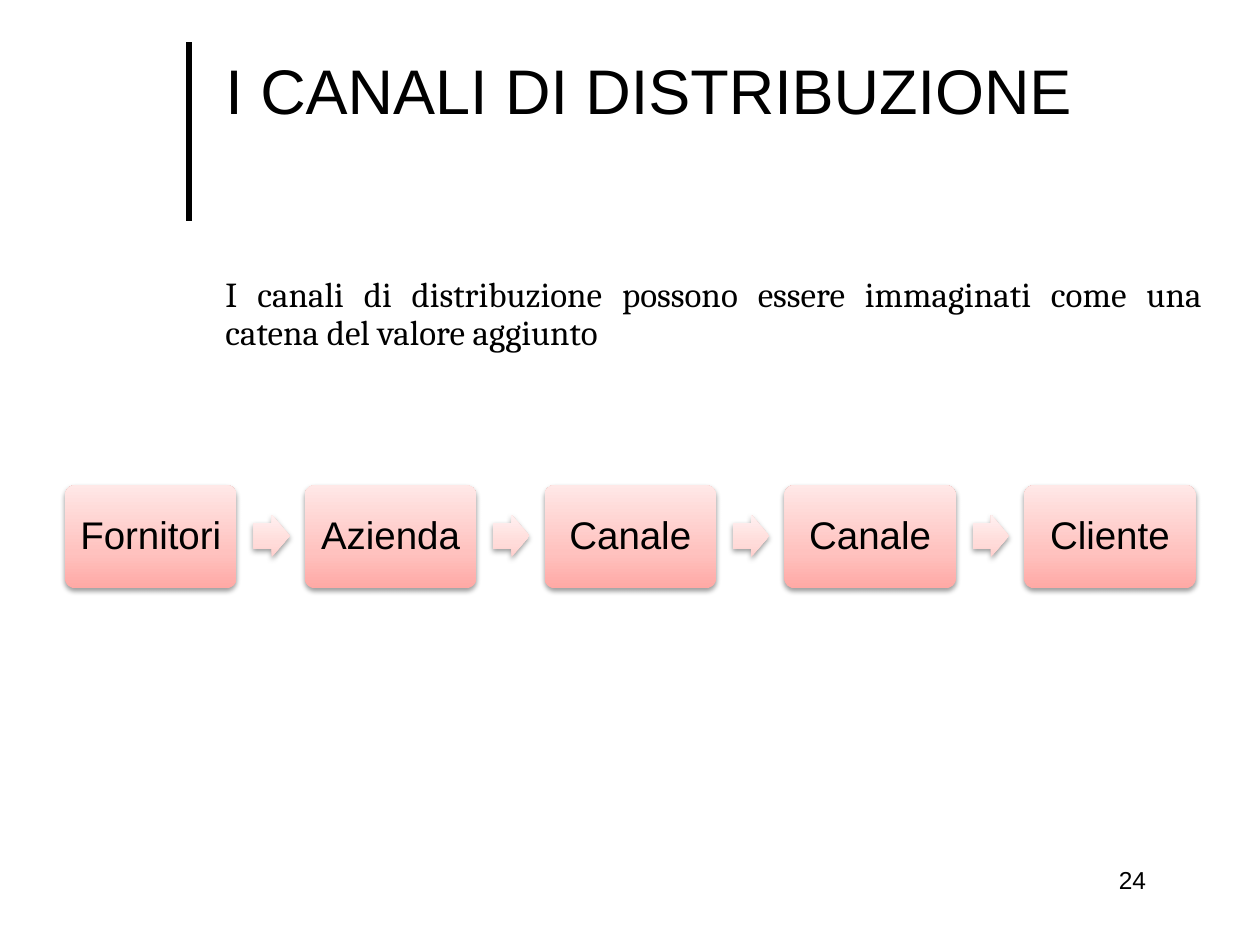
from dataclasses import dataclass

from lxml import etree
from pptx import Presentation
from pptx.dml.color import RGBColor
from pptx.enum.shapes import MSO_CONNECTOR, MSO_SHAPE
from pptx.enum.text import MSO_ANCHOR as Anchor, PP_ALIGN as Align
from pptx.oxml import parse_xml
from pptx.oxml.ns import nsdecls, qn
from pptx.util import Pt

COLORS = {
    "ink": "000000",
    "card_low": "FFA9A5", "card_mid": "FFC2BF", "card_high": "FFE8E7",
    "arrow_low": "FFCFCD", "arrow_mid": "FFDCDA", "arrow_high": "FFF1F1",
}
STEPS = ["Fornitori", "Azienda", "Canale", "Canale", "Cliente"]
PITCH = 137


@dataclass
class Box:
    left: float
    top: float
    width: float
    height: float

    def shifted(self, dx: float) -> "Box":
        return Box(self.left + dx, self.top, self.width, self.height)

    def points(self) -> list:
        return [Pt(v) for v in (self.left, self.top, self.width, self.height)]


@dataclass
class Label:
    text: str
    size: float
    font: str = "Arial"
    align: Align = Align.LEFT
    anchor: Anchor = Anchor.TOP
    spacing: float = 1.0


CARD = Box(37.2, 277.2, 98, 59)
ARROW = Box(144.8, 294, 20.8, 24.4)


def set_all(obj, values: dict) -> None:
    for name, value in values.items():
        setattr(obj, name, value)


def write(tf, label: Label, **margins: float) -> None:
    set_all(tf, {"word_wrap": True, "vertical_anchor": label.anchor})
    set_all(tf, {f"margin_{side}": Pt(v) for side, v in margins.items()})
    p = tf.paragraphs[0]
    set_all(p, {"alignment": label.align, "line_spacing": label.spacing})
    r = p.add_run()
    r.text = label.text
    set_all(r.font, {"name": label.font, "size": Pt(label.size)})
    r.font.color.rgb = RGBColor.from_string(COLORS["ink"])


def add_label(slide, box: Box, label: Label, **margins: float) -> None:
    write(slide.shapes.add_textbox(*box.points()).text_frame, label, **margins)


def add_raised(slide, kind: MSO_SHAPE, box: Box, tone: str, adjust: list):
    """Add a shape with a vertical three-stop gradient and a soft shadow."""
    sp = slide.shapes.add_shape(kind, *box.points())
    for i, value in enumerate(adjust):
        sp.adjustments[i] = value
    sp.line.fill.background()
    stops = "".join(
        f'<a:gs pos="{pos * 1000}"><a:srgbClr val="{COLORS[tone + level]}"/></a:gs>'
        for pos, level in ((0, "_low"), (35, "_mid"), (100, "_high")))
    sp._element.spPr.find(qn("a:prstGeom")).addnext(parse_xml(
        f'<a:gradFill rotWithShape="1" {nsdecls("a")}><a:gsLst>{stops}</a:gsLst>'
        '<a:lin ang="16200000" scaled="1"/></a:gradFill>'))
    sp._element.spPr.append(parse_xml(
        f'<a:effectLst {nsdecls("a")}><a:outerShdw blurRad="{Pt(3.1)}" '
        f'dist="{Pt(1.6)}" dir="5400000" rotWithShape="0">'
        f'<a:srgbClr val="{COLORS["ink"]}"><a:alpha val="38000"/></a:srgbClr>'
        '</a:outerShdw></a:effectLst>'))
    return sp


def add_rule(slide, x: float, top: float, bottom: float) -> None:
    line = slide.shapes.add_connector(
        MSO_CONNECTOR.STRAIGHT, Pt(x), Pt(bottom), Pt(x), Pt(top))
    line.line.width = Pt(3)
    line.line.color.rgb = RGBColor.from_string(COLORS["ink"])
    etree.SubElement(line._element.spPr, qn("a:effectLst"))


def main() -> None:
    prs = Presentation()
    set_all(prs, {"slide_width": Pt(720), "slide_height": Pt(540)})
    slide = prs.slides.add_slide(prs.slide_layouts[6])

    # Title with its vertical rule
    add_rule(slide, 108, 23.8, 126)
    add_label(slide, Box(121.7, 19.4, 572.4, 63.4),
              Label("I CANALI DI DISTRIBUZIONE", 36, anchor=Anchor.MIDDLE))

    # Introductory sentence
    add_label(slide, Box(121.7, 100.8, 572.4, 401.8),
              Label("I canali di distribuzione possono essere immaginati come "
                    "una catena del valore aggiunto", 20, "Cambria",
                    Align.JUSTIFY, spacing=0.9), top=57.5)

    # Slide number
    add_label(slide, Box(632.2, 491, 102.2, 36), Label("24", 14))

    # Value chain: cards with an arrow between neighbours
    for i, step in enumerate(STEPS):
        card = add_raised(slide, MSO_SHAPE.ROUNDED_RECTANGLE,
                          CARD.shifted(i * PITCH), "card", [0.1])
        write(card.text_frame,
              Label(step, 22, align=Align.CENTER, anchor=Anchor.MIDDLE, spacing=0.9),
              left=4, right=4, top=6.5, bottom=6.5)
        if i < len(STEPS) - 1:
            add_raised(slide, MSO_SHAPE.RIGHT_ARROW,
                       ARROW.shifted(i * PITCH), "arrow", [0.6, 0.5])

    prs.save("out.pptx")


if __name__ == "__main__":
    main()
